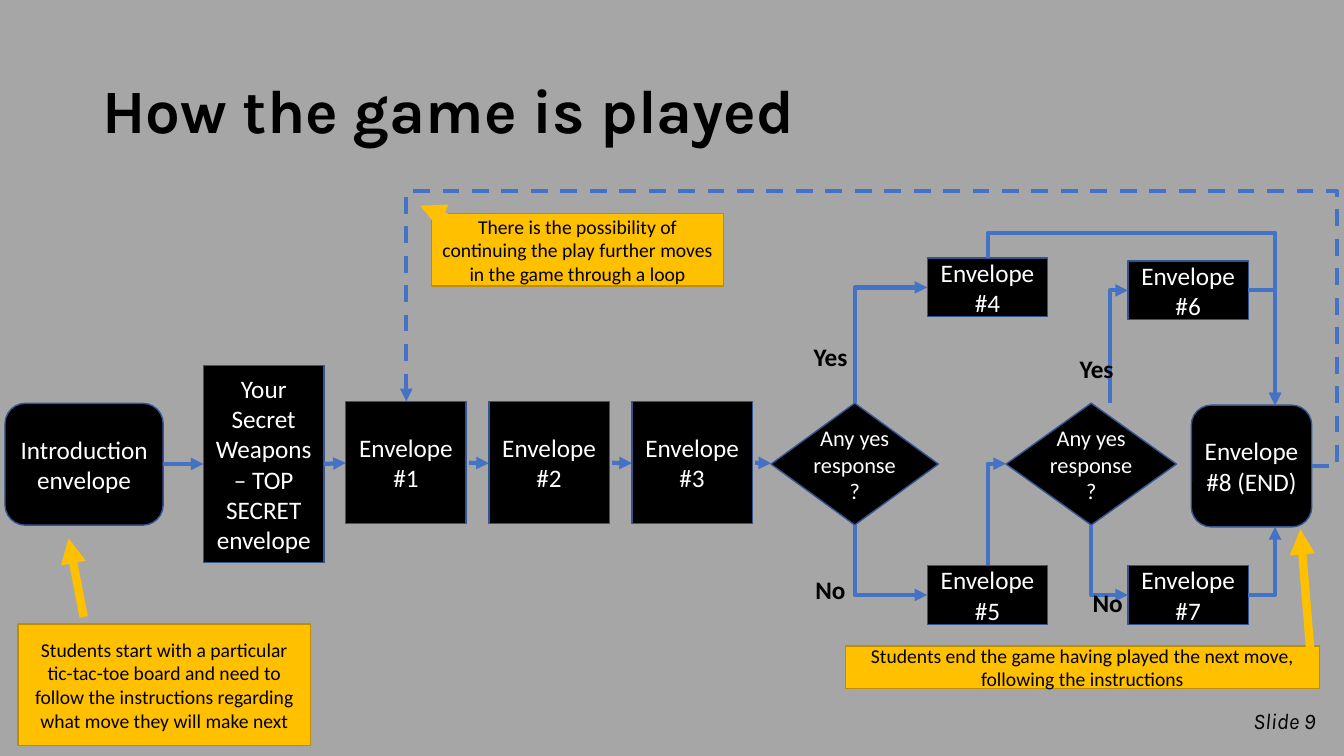
from pptx import Presentation
from pptx import util as u
from pptx.dml.color import RGBColor
from pptx.enum import dml, shapes, text
from pptx.oxml import ns
from lxml import etree

BLACK = RGBColor(0, 0, 0)
WHITE = RGBColor(255, 255, 255)
GREY = RGBColor(0xA6, 0xA6, 0xA6)
NAVY = RGBColor(0x32, 0x54, 0x91)
BLUE = RGBColor(0x44, 0x72, 0xC4)
AMBER = RGBColor(0xFF, 0xC0, 0)
BRONZE = RGBColor(0xBD, 0x8E, 0)

SHAPE = shapes.MSO_SHAPE
CENTER, RIGHT = text.PP_ALIGN.CENTER, text.PP_ALIGN.RIGHT
MIDDLE, TOP = text.MSO_ANCHOR.MIDDLE, text.MSO_ANCHOR.TOP
ENVELOPE_WIDTH, ENVELOPE_HEIGHT, BRANCH_HEIGHT = 86, 87, 42


def points(values):
    return [u.Pt(value) for value in values]


def apply(target, values):
    for name, value in values.items():
        setattr(target, name, value)


def write(shape, words, font, para_format, anchor=MIDDLE, insets=(7.2, 3.6)):
    side, end = points(insets)
    frame = shape.text_frame
    apply(frame, dict(word_wrap=True, vertical_anchor=anchor, margin_left=side,
                      margin_right=side, margin_top=end, margin_bottom=end))
    para = frame.paragraphs[0]
    apply(para, para_format)
    span = para.add_run()
    span.text = words
    font = dict(font)
    span.font.color.rgb = font.pop("color")
    apply(span.font, font)


def add_text(page, box, words, font, para_format, anchor=MIDDLE):
    write(page.shapes.add_textbox(*points(box)), words, font, para_format, anchor)


def add_block(page, box, words, kind=SHAPE.RECTANGLE, fill=BLACK, edge=NAVY,
              color=WHITE, size=18, insets=(7.2, 3.6)):
    block = page.shapes.add_shape(kind, *points(box))
    block.shadow.inherit = False
    block.fill.solid()
    block.fill.fore_color.rgb = fill
    block.line.color.rgb = edge
    block.line.width = u.Pt(1)
    font = dict(name="Calibri", size=u.Pt(size), color=color)
    write(block, words, font, dict(alignment=CENTER), insets=insets)


def style_arrow(arrow, color, width, dashed=False):
    arrow.line.color.rgb = color
    arrow.line.width = u.Pt(width)
    if dashed:
        arrow.line.dash_style = dml.MSO_LINE.DASH
    outline = arrow.line._get_or_add_ln()
    etree.SubElement(outline, ns.qn("a:tailEnd"), type="triangle")


def add_arrow(page, start, end, color=BLUE, width=3):
    arrow = page.shapes.add_connector(
        shapes.MSO_CONNECTOR.STRAIGHT, *points(start + end))
    style_arrow(arrow, color, width)
    etree.SubElement(arrow._element.spPr, ns.qn("a:effectLst"))


def add_route(page, corners, dashed=False):
    builder = page.shapes.build_freeform(*points(corners[0]))
    builder.add_line_segments([points(corner) for corner in corners[1:]], close=False)
    route = builder.convert_to_shape()
    route.shadow.inherit = False
    route.fill.background()
    for outline in route._element.iter(ns.qn("a:path")):
        outline.set("fill", "none")
    style_arrow(route, BLUE, 3, dashed)


def draw_title(page, box):
    font = dict(name="Karla", size=u.Pt(44), bold=True, color=BLACK)
    add_text(page, box, "How the game is played", font, dict(line_spacing=0.9))


def draw_footer(page, box):
    font = dict(name="Karla", size=u.Pt(16), italic=True, color=BLACK)
    para_format = dict(alignment=RIGHT, line_spacing=0.9, space_before=u.Pt(10))
    add_text(page, box, "Slide 9", font, para_format, TOP)


def draw_opening(page, box):
    left, top, width, height = box
    middle = top + height / 2
    secret, first, step = left + 141.8, left + 243.4, 102.2
    add_block(page, (left, middle - 43.3, 113, ENVELOPE_HEIGHT), "Introduction envelope",
              SHAPE.ROUNDED_RECTANGLE, insets=(2.9, 0))
    add_block(page, (secret, top, ENVELOPE_WIDTH, height),
              "Your Secret Weapons – TOP SECRET envelope")
    add_arrow(page, (left + 113, middle), (secret, middle))
    add_arrow(page, (secret + ENVELOPE_WIDTH, middle), (first, middle - 0.8))
    for index in range(3):
        x = first + index * step
        add_block(page, (x, middle - 44.6, ENVELOPE_WIDTH, ENVELOPE_HEIGHT),
                  f"Envelope #{index + 1}")
        end = first + (index + 1) * step if index < 2 else left + width
        add_arrow(page, (x + ENVELOPE_WIDTH + 2, middle - 0.8), (end, middle - 0.5))


def draw_decision(page, box, branch, numbers, yes_x, rise, labels):
    left, top, width, height = box
    bottom, center = top + height, left + width / 2
    add_block(page, box, "Any yes response?", SHAPE.DIAMOND, size=16, insets=(0, 0))
    routes = ((left + yes_x, top, top - rise), (center, bottom, top + 137))
    font = dict(name="Calibri", size=u.Pt(18), bold=True, color=BLACK)
    for number, (x, start, y), word, (dx, dy) in zip(numbers, routes, ("Yes", "No"), labels):
        add_block(page, (left + branch, y - BRANCH_HEIGHT / 2, ENVELOPE_WIDTH, BRANCH_HEIGHT),
                  f"Envelope #{number}")
        add_route(page, [(x, start), (x, y), (left + branch, y)])
        add_text(page, (left + dx, top + dy, 46, 34.5), word, font, dict(alignment=CENTER))


def draw_ending(page, box):
    left, top, width, height = box
    target, bottom, side = left + 59.8, top + height, left + 40.4
    fourth = left - 145.4
    add_block(page, box, "Envelope #8 (END)", SHAPE.ROUNDED_RECTANGLE, insets=(2.9, 0))
    add_route(page, [(fourth, top - 105), (fourth, top - 123),
                     (target, top - 123), (target, top)])
    add_route(page, [(side, top - 82), (target, top - 82), (target, top)])
    add_route(page, [(side, bottom + 48.4), (target, bottom + 48.4), (target, bottom)])
    add_route(page, [(fourth, top + 114.5), (fourth, top + 41.8), (fourth + 13, top + 41.8)])
    right, middle = left + width, top + height / 2
    add_route(page, [(right, middle), (right + 18, middle), (right + 18, 136.5),
                     (290.2, 136.5), (290.2, 286.6)], dashed=True)


def draw_note(page, box, words, start, end):
    left, top = box[:2]
    add_block(page, box, words, fill=AMBER, edge=BRONZE, color=BLACK, size=14)
    add_arrow(page, (left + start[0], top + start[1]), (left + end[0], top + end[1]), AMBER, 6)


def main():
    deck = Presentation()
    deck.slide_width, deck.slide_height = u.Pt(960), u.Pt(540)
    page = deck.slides.add_slide(deck.slide_layouts[6])
    page.background.fill.solid()
    page.background.fill.fore_color.rgb = GREY
    draw_title(page, (66, 28.8, 828, 104.4))
    draw_opening(page, (3.6, 261.2, 547.2, 140.4))
    draw_decision(page, (550.8, 288, 119.5, 87), 111.6, (4, 5), 59.75, 82.7,
                  ((19.4, -51), (19.4, 116)))
    draw_decision(page, (718.6, 288, 121.7, 87), 87.1, (6, 7), 74.1, 80.6,
                  ((41.7, -41.8), (49.6, 125.3)))
    draw_ending(page, (851, 289.4, ENVELOPE_WIDTH, ENVELOPE_HEIGHT))
    draw_footer(page, (312.5, 504, 634.3, 36))
    draw_note(page, (13, 445.7, 208.8, 87),
              "Students start with a particular tic-tac-toe board and need to follow "
              "the instructions regarding what move they will make next",
              (46.8, -5), (36, -61.2))
    draw_note(page, (604, 461.5, 338.4, 30.2),
              "Students end the game having played the next move, following the instructions",
              (332.7, 12.2), (324.8, -83.5))
    draw_note(page, (308.2, 152.6, 208.8, 51.8),
              "There is the possibility of continuing the play further moves "
              "in the game through a loop",
              (17.2, 5.8), (-8, -5.7))
    deck.save("out.pptx")


if __name__ == "__main__":
    main()
